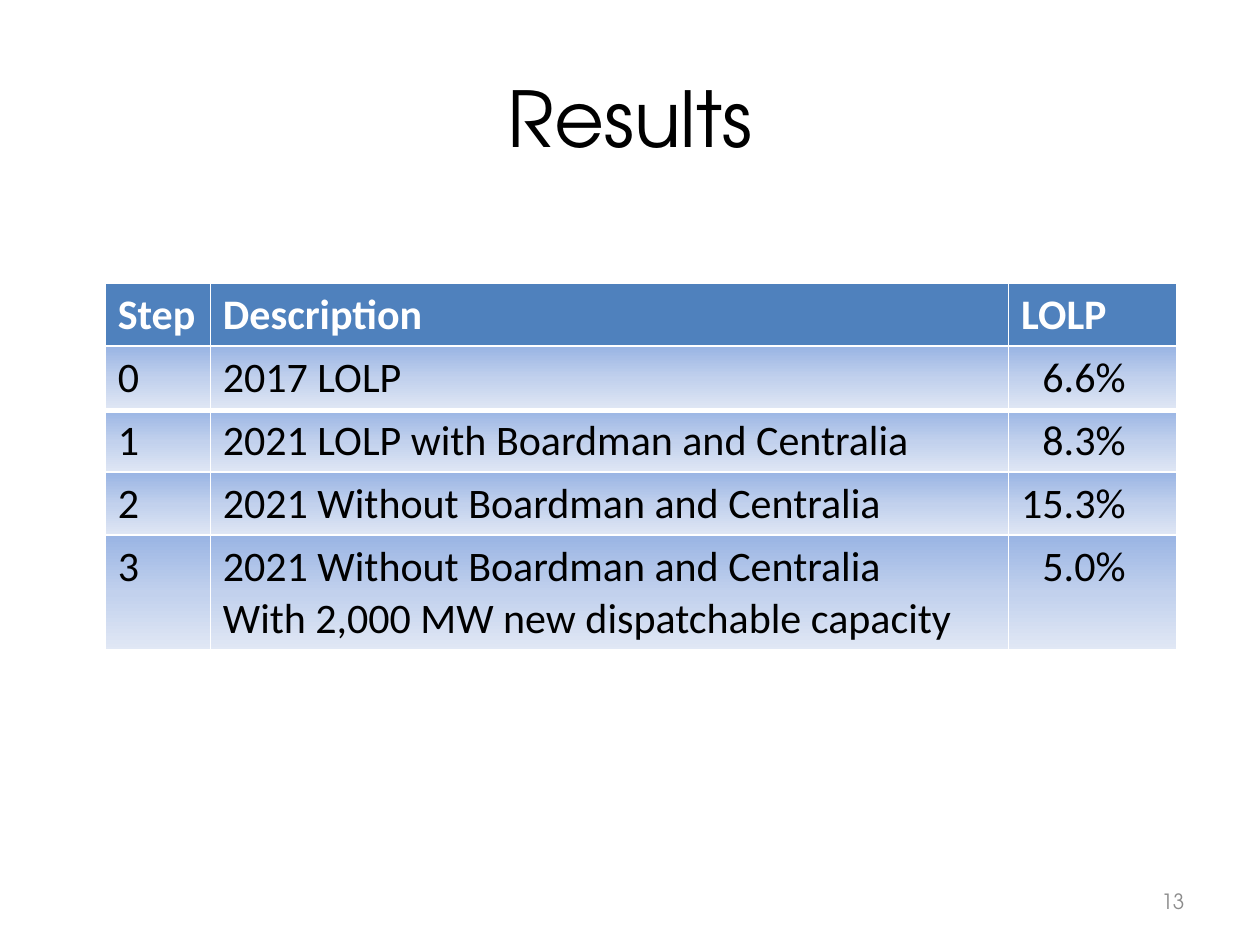
from typing import NamedTuple

from lxml.etree import SubElement
from pptx import Presentation
from pptx.dml.color import RGBColor
from pptx.enum.text import MSO_ANCHOR, PP_ALIGN
from pptx.oxml.ns import qn
from pptx.util import Cm, Pt

BLACK = RGBColor(0x00, 0x00, 0x00)
WHITE = RGBColor(0xFF, 0xFF, 0xFF)
GRAY = RGBColor(0x8C, 0x8C, 0x8C)
HEADER_BLUE = RGBColor(0x4F, 0x81, 0xBD)
ROW_GRADIENT = (
    (0, RGBColor(0x9A, 0xB5, 0xE4)),
    (50, RGBColor(0xC2, 0xD1, 0xED)),
    (100, RGBColor(0xE1, 0xE8, 0xF5)),
)
BORDERS = {"lnL": 1, "lnR": 1, "lnT": 1, "lnB": 3}

HEADING_FONT = "TeX Gyre Adventor"
TABLE_FONT = "Calibri"

TABLE_LEFT = Cm(2.12)
TABLE_TOP = Cm(5.72)
COLUMN_WIDTHS = (Cm(2.12), Cm(16.09), Cm(3.39))
ROW_HEIGHT = Cm(1.27)
TALL_ROW_HEIGHT = Cm(2.29)
PERCENT_RIGHT_MARGIN = Cm(1.03)


class Step(NamedTuple):
    number: str
    description: str
    lolp: str


HEADER = Step("Step", "Description", "LOLP")
STEPS = (
    Step("0", "2017 LOLP", "6.6%"),
    Step("1", "2021 LOLP with Boardman and Centralia", "8.3%"),
    Step("2", "2021 Without Boardman and Centralia", "15.3%"),
    Step("3", "2021 Without Boardman and Centralia\n"
              "With 2,000 MW new dispatchable capacity", "5.0%"),
)


def write_text(frame, text: str, *, font: str, size: int, color: RGBColor,
               bold: bool = False, align=PP_ALIGN.LEFT) -> None:
    paragraph = frame.paragraphs[0]
    paragraph.text = text
    paragraph.alignment = align
    for run in paragraph.runs:
        run.font.name = font
        run.font.size = Pt(size)
        run.font.bold = bold
        run.font.color.rgb = color


def add_solid(parent, color: RGBColor) -> None:
    SubElement(SubElement(parent, qn("a:solidFill")), qn("a:srgbClr"), val=str(color))


def style_cell(cell, is_header: bool) -> None:
    """Add white borders, then a solid header fill or a vertical gradient."""
    properties = cell._tc.get_or_add_tcPr()
    for side, points in BORDERS.items():
        border = SubElement(properties, qn(f"a:{side}"), w=str(Pt(points)))
        add_solid(border, WHITE)
    if is_header:
        add_solid(properties, HEADER_BLUE)
        return
    gradient = SubElement(properties, qn("a:gradFill"), rotWithShape="1")
    stops = SubElement(gradient, qn("a:gsLst"))
    for percent, color in ROW_GRADIENT:
        stop = SubElement(stops, qn("a:gs"), pos=str(percent * 1000))
        SubElement(stop, qn("a:srgbClr"), val=str(color))
    SubElement(gradient, qn("a:lin"), ang="5400000", scaled="0")


def add_step_table(slide, step: Step, top: int) -> None:
    """Add one step as a single-row table, so that steps can be revealed in turn."""
    is_header = step is HEADER
    height = TALL_ROW_HEIGHT if "\n" in step.description else ROW_HEIGHT
    table = slide.shapes.add_table(
        1, len(step), TABLE_LEFT, top, sum(COLUMN_WIDTHS), height).table
    table.first_row = table.horz_banding = False
    for column, width in zip(table.columns, COLUMN_WIDTHS):
        column.width = width
    for cell, text in zip(table.rows[0].cells, step):
        is_percent = text.endswith("%")
        if is_percent:
            cell.margin_right = PERCENT_RIGHT_MARGIN
        write_text(cell.text_frame, text, font=TABLE_FONT, size=24,
                   color=WHITE if is_header else BLACK, bold=is_header,
                   align=PP_ALIGN.RIGHT if is_percent else PP_ALIGN.LEFT)
        style_cell(cell, is_header)


def add_title(slide) -> None:
    title = slide.shapes.title
    title.left, title.top = Cm(1.27), Cm(0.76)
    title.width, title.height = Cm(22.86), Cm(3.18)
    title.text_frame.vertical_anchor = MSO_ANCHOR.MIDDLE
    write_text(title.text_frame, "Results", font=HEADING_FONT, size=44,
               color=BLACK, align=PP_ALIGN.CENTER)


def add_page_number(slide) -> None:
    page_number = slide.shapes.add_textbox(Cm(18.21), Cm(17.65), Cm(5.92), Cm(1.02))
    frame = page_number.text_frame
    frame.word_wrap = True
    frame.vertical_anchor = MSO_ANCHOR.MIDDLE
    write_text(frame, "13", font=HEADING_FONT, size=12, color=GRAY,
               align=PP_ALIGN.RIGHT)


def main() -> None:
    presentation = Presentation()
    presentation.slide_width, presentation.slide_height = Cm(25.4), Cm(19.05)
    slide = presentation.slides.add_slide(presentation.slide_layouts[5])
    add_title(slide)
    rows = list(enumerate((HEADER, *STEPS)))
    # Step 0 goes in front, so its thick lower border stays visible.
    for index, step in rows[:1] + rows[2:] + rows[1:2]:
        add_step_table(slide, step, TABLE_TOP + index * ROW_HEIGHT)
    add_page_number(slide)
    presentation.save("out.pptx")


if __name__ == "__main__":
    main()
